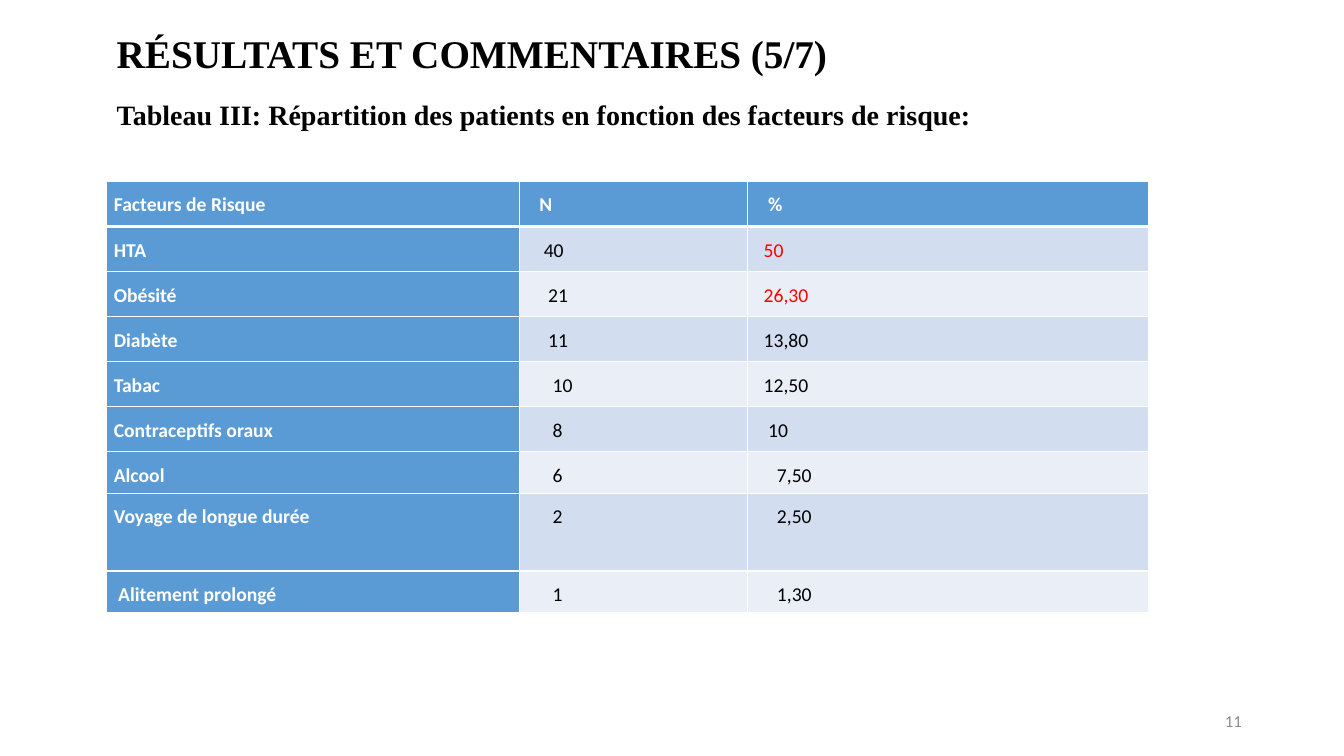
from dataclasses import dataclass

from lxml.etree import SubElement
from pptx import Presentation
from pptx.dml.color import RGBColor as Color
from pptx.enum.text import MSO_ANCHOR as Anchor, PP_ALIGN as Align
from pptx.oxml.ns import qn
from pptx.slide import Slide
from pptx.table import _Cell as Cell
from pptx.text.text import _Paragraph as Paragraph
from pptx.util import Pt


@dataclass(frozen=True)
class Theme:
    heading_font: str = "Times New Roman"
    body_font: str = "Calibri"
    title_size: float = 28
    caption_size: float = 20
    table_size: float = 14
    number_size: float = 12
    black: str = "000000"
    white: str = "FFFFFF"
    red: str = "FF0000"
    grey: str = "8C8C8C"
    header: str = "5B9BD5"
    bands: tuple[str, str] = ("D2DEEF", "EAEFF7")


THEME = Theme()


@dataclass(frozen=True)
class Label:
    text: str
    left: float
    top: float
    width: float
    height: float
    size: float
    font: str = THEME.heading_font
    color: str = THEME.black
    bold: bool = True
    align: Align = Align.LEFT
    anchor: Anchor = Anchor.TOP


@dataclass(frozen=True)
class RiskRow:
    texts: tuple[str, str, str]
    indents: tuple[int, int, int]  # in steps of INDENT_STEP
    height: float = 32.2
    before: float = 0
    after: float = 8
    percent_color: str = THEME.black


LABELS = [
    Label("RÉSULTATS ET COMMENTAIRES (5/7)", 76.3, 17.3, 540, 41, THEME.title_size),
    Label("Tableau III: Répartition des patients en fonction des facteurs de risque:",
          76.3, 66.2, 638.6, 31.7, THEME.caption_size),
    Label("11", 678.2, 500.4, 216, 28.8, THEME.number_size, THEME.body_font,
          THEME.grey, False, Align.RIGHT, Anchor.MIDDLE),
]

ROWS = [
    RiskRow(("Facteurs de Risque", "N", "%"), (0, 3, 3)),
    RiskRow(("HTA", "40", "50"), (0, 4, 2), percent_color=THEME.red),
    RiskRow(("Obésité", "21", "26,30"), (0, 5, 2), percent_color=THEME.red),
    RiskRow(("Diabète", "11", "13,80"), (0, 5, 2)),
    RiskRow(("Tabac", "10", "12,50"), (0, 6, 2)),
    RiskRow(("Contraceptifs oraux", "8", "10"), (0, 6, 3)),
    RiskRow(("Alcool", "6", "7,50"), (0, 6, 5), 29.6, 6, 16),
    RiskRow(("Voyage de longue durée", "2", "2,50"), (0, 6, 5), 55.6, 6, 16),
    RiskRow(("Alitement prolongé", "1", "1,30"), (1, 6, 5), 29.5, 6, 16),
]
COLUMN_WIDTHS = (294.5, 163.4, 286.6)
TABLE_LEFT, TABLE_TOP = 76.3, 129.6
CELL_MARGIN, INDENT_STEP = 5, 3.16
THIN, THICK = 1, 3


def style_font(para: Paragraph, font: str, size: float, color: str, bold: bool) -> None:
    para.font.name = font
    para.font.size = Pt(size)
    para.font.bold = bold
    para.font.color.rgb = Color.from_string(color)


def add_label(page: Slide, label: Label) -> None:
    box = page.shapes.add_textbox(Pt(label.left), Pt(label.top),
                                  Pt(label.width), Pt(label.height))
    frame = box.text_frame
    frame.word_wrap = True
    frame.vertical_anchor = label.anchor
    para = frame.paragraphs[0]
    para.text = label.text
    para.alignment = label.align
    style_font(para, label.font, label.size, label.color, label.bold)


def add_borders(cell: Cell, top: float, bottom: float) -> None:
    properties = cell._tc.get_or_add_tcPr()
    sides = {"a:lnL": THIN, "a:lnR": THIN, "a:lnT": top, "a:lnB": bottom}
    for tag, width in sides.items():
        line = SubElement(properties, qn(tag), w=str(Pt(width)))
        fill = SubElement(line, qn("a:solidFill"))
        SubElement(fill, qn("a:srgbClr"), val=THEME.white)


def fill_cell(cell: Cell, row: RiskRow, row_index: int, column: int) -> None:
    is_header = row_index == 0 or column == 0
    # Borders come before the fill in the cell properties
    add_borders(cell, top=THICK if row_index == 1 else THIN,
                bottom=THICK if row_index == 0 else THIN)
    background = THEME.header if is_header else THEME.bands[(row_index - 1) % 2]
    cell.fill.solid()
    cell.fill.fore_color.rgb = Color.from_string(background)

    cell.margin_left = Pt(CELL_MARGIN + row.indents[column] * INDENT_STEP)
    cell.margin_right = Pt(CELL_MARGIN)
    cell.margin_top = cell.margin_bottom = Pt(0)

    para = cell.text_frame.paragraphs[0]
    para.text = row.texts[column]
    para.line_spacing = 1.5
    para.space_before, para.space_after = Pt(row.before), Pt(row.after)
    value_color = row.percent_color if column == 2 else THEME.black
    style_font(para, THEME.body_font, THEME.table_size,
               THEME.white if is_header else value_color, is_header)


def add_risk_table(page: Slide) -> None:
    frame = page.shapes.add_table(
        len(ROWS), len(COLUMN_WIDTHS), Pt(TABLE_LEFT), Pt(TABLE_TOP),
        Pt(sum(COLUMN_WIDTHS)), Pt(sum(row.height for row in ROWS)))
    table = frame.table
    table.first_col = True
    for column, width in enumerate(COLUMN_WIDTHS):
        table.columns[column].width = Pt(width)
    for row_index, row in enumerate(ROWS):
        table.rows[row_index].height = Pt(row.height)
        for column in range(len(COLUMN_WIDTHS)):
            fill_cell(table.cell(row_index, column), row, row_index, column)


def main() -> None:
    deck = Presentation()
    deck.slide_width, deck.slide_height = Pt(960), Pt(540)
    page = deck.slides.add_slide(deck.slide_layouts[6])

    # Risk factor table
    add_risk_table(page)

    # Title, caption and page number
    for label in LABELS:
        add_label(page, label)

    deck.save("out.pptx")


if __name__ == "__main__":
    main()
